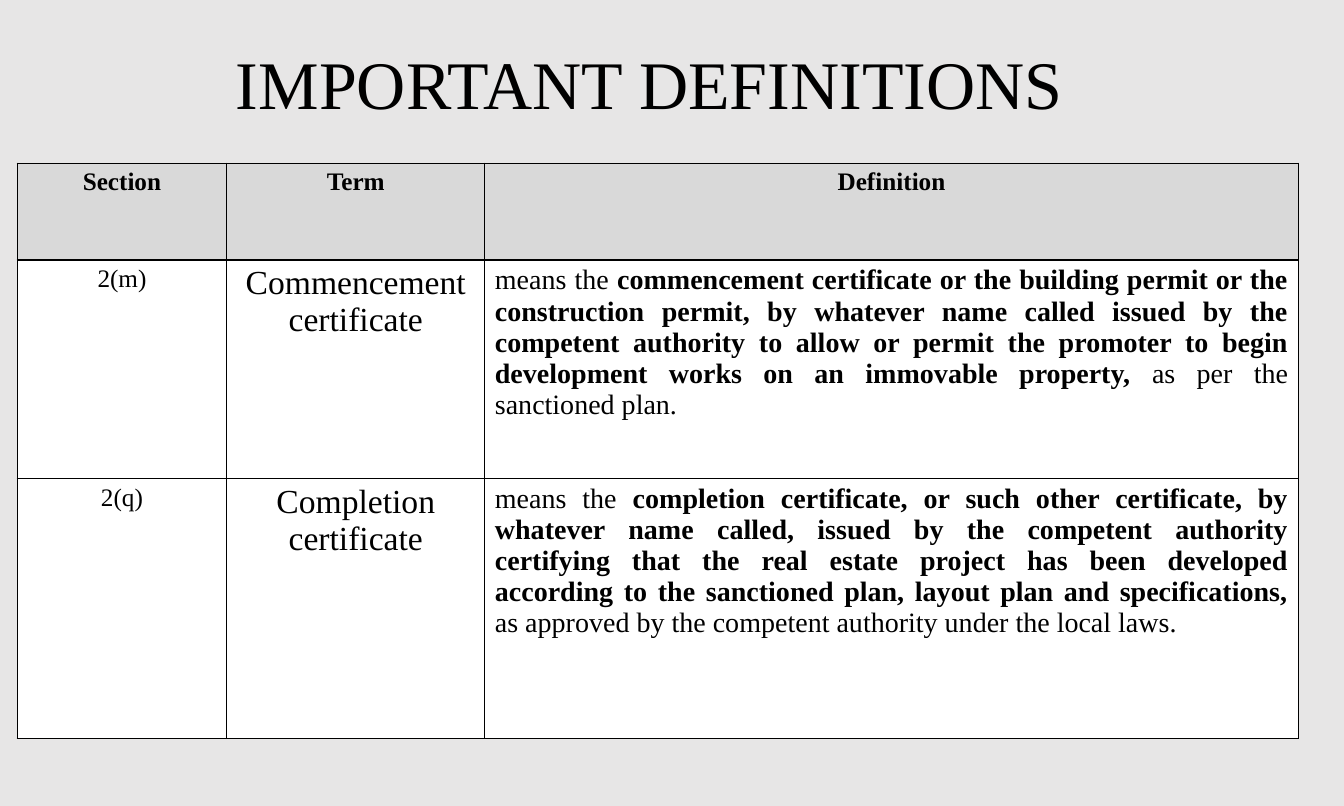
from dataclasses import dataclass

from lxml.etree import SubElement
from pptx import Presentation
from pptx.dml.color import RGBColor
from pptx.enum.text import MSO_ANCHOR, PP_ALIGN
from pptx.oxml.ns import qn
from pptx.slide import Slide
from pptx.table import _Cell
from pptx.util import Inches, Pt

FONT = "Times New Roman"
COLORS = {"back": "E7E6E6", "head": "D9D9D9", "body": "FFFFFF", "ink": "000000"}
COLS = (2.08, 2.56, 8.07)
LEFT, WIDTH = 0.17, sum(COLS)


@dataclass
class Entry:
    section: str
    term: str
    lead: str
    key: str
    tail: str
    height: float


HEADS = ("Section", "Term", "Definition")
HEAD_HEIGHT = 0.96
ENTRIES = (
    Entry(
        "2(m)", "Commencement certificate", "means the ",
        "commencement certificate or the building permit or the construction "
        "permit, by whatever name called issued by the competent authority to "
        "allow or permit the promoter to begin development works on an "
        "immovable property, ",
        "as per the sanctioned plan.", 2.17),
    Entry(
        "2(q)", "Completion certificate", "means the ",
        "completion certificate, or such other certificate, by whatever name "
        "called, issued by the competent authority certifying that the real "
        "estate project has been developed according to the sanctioned plan, "
        "layout plan and specifications, ",
        "as approved by the competent authority under the local laws.", 2.58),
)


def color(name: str) -> RGBColor:
    return RGBColor.from_string(COLORS[name])


def write(par, runs: tuple, size: float, align=PP_ALIGN.CENTER) -> None:
    """Fill a paragraph with (text, bold) runs."""
    par.alignment = align
    par.font.name = FONT
    par.font.size = Pt(size)
    par.font.color.rgb = color("ink")
    for text, bold in runs:
        run = par.add_run()
        run.text = text
        run.font.bold = bold


def border(cell: _Cell) -> None:
    """Draw a thin line on all four sides, ahead of the cell fill."""
    props = cell._tc.get_or_add_tcPr()
    for spot, side in enumerate(("a:lnL", "a:lnR", "a:lnT", "a:lnB")):
        line = SubElement(props, qn(side), w=str(Pt(1)))
        fill = SubElement(line, qn("a:solidFill"))
        SubElement(fill, qn("a:srgbClr"), val=COLORS["ink"])
        props.insert(spot, line)


def put(cell: _Cell, runs: tuple, size: float, fill: str,
        align=PP_ALIGN.CENTER) -> None:
    cell.fill.solid()
    cell.fill.fore_color.rgb = color(fill)
    border(cell)
    write(cell.text_frame.paragraphs[0], runs, size, align)


def add_title(slide: Slide) -> None:
    box = slide.shapes.add_textbox(
        Inches(LEFT), Inches(0.51), Inches(WIDTH), Inches(0.77))
    frame = box.text_frame
    frame.word_wrap = True
    frame.vertical_anchor = MSO_ANCHOR.BOTTOM
    par = frame.paragraphs[0]
    par.line_spacing = 0.9
    write(par, (("IMPORTANT DEFINITIONS ", False),), 48.6)


def add_terms(slide: Slide) -> None:
    heights = (HEAD_HEIGHT, *(entry.height for entry in ENTRIES))
    table = slide.shapes.add_table(
        len(heights), len(COLS), Inches(LEFT), Inches(1.62),
        Inches(WIDTH), Inches(sum(heights))).table
    table.first_row = table.horz_banding = False
    for col, width in zip(table.columns, COLS):
        col.width = Inches(width)
    for row, height in zip(table.rows, heights):
        row.height = Inches(height)

    # Header row
    for cell, head in zip(table.rows[0].cells, HEADS):
        put(cell, ((head, True),), 18, "head")

    # One row for each defined term
    for num, entry in enumerate(ENTRIES, 1):
        put(table.cell(num, 0), ((entry.section, False),), 18, "body")
        put(table.cell(num, 1), ((entry.term, False),), 24, "body")
        runs = ((entry.lead, False), (entry.key, True), (entry.tail, False))
        put(table.cell(num, 2), runs, 20, "body", PP_ALIGN.JUSTIFY)


def main() -> None:
    deck = Presentation()
    # Five to three, eight inches high
    deck.slide_width, deck.slide_height = Inches(40) // 3, Inches(8)
    slide = deck.slides.add_slide(deck.slide_layouts[6])
    slide.background.fill.solid()
    slide.background.fill.fore_color.rgb = color("back")
    add_title(slide)
    add_terms(slide)
    deck.save("out.pptx")


if __name__ == "__main__":
    main()
